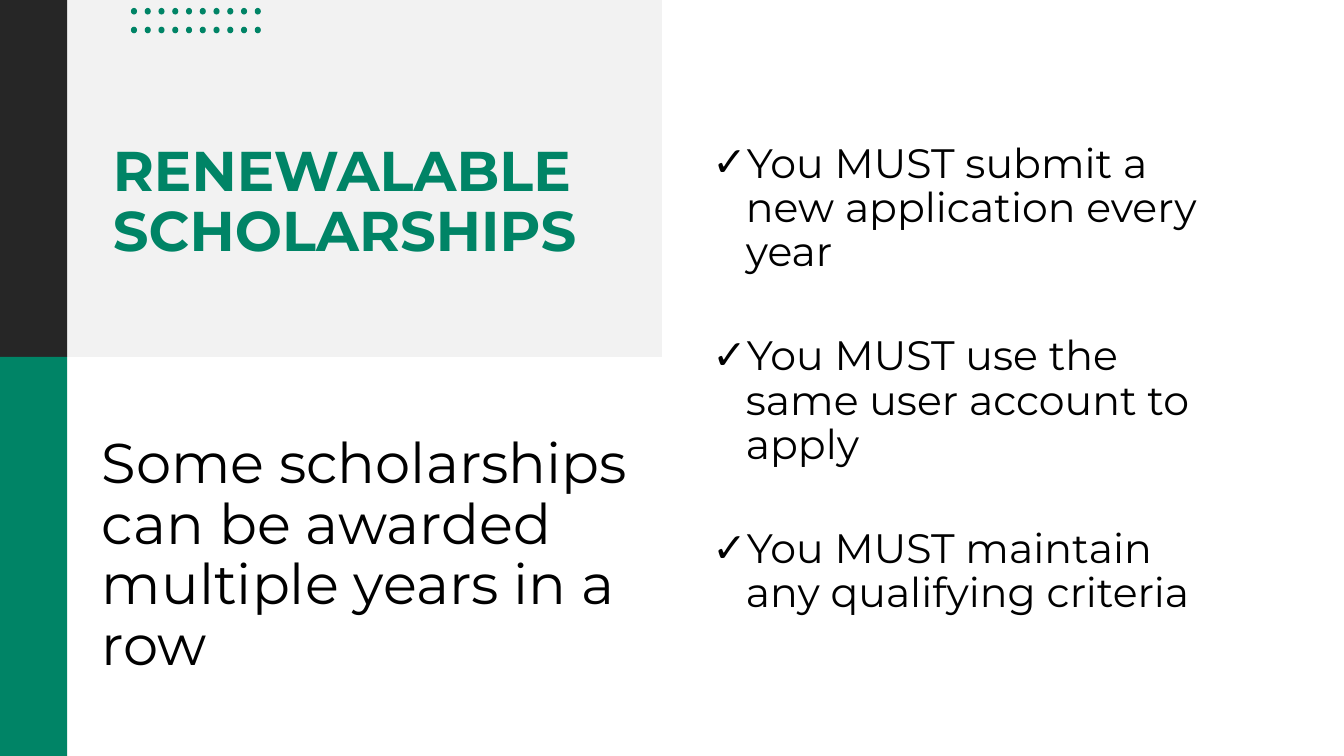
from lxml import etree
from pptx import Presentation
from pptx import util as u
from pptx.dml.color import RGBColor
from pptx.enum import shapes, text
from pptx.oxml.ns import qn

FONT = "Montserrat"
COLORS = {"green": "008466", "dark": "262626", "panel": "F2F2F2", "text": "000000"}

TITLE_LINES = ["RENEWALABLE", "SCHOLARSHIPS"]
STATEMENT = "Some scholarships can be awarded multiple years in a row"
REQUIREMENTS = [
    "You MUST submit a new application every year",
    "You MUST use the same user account to apply",
    "You MUST maintain any qualifying criteria",
]

# Lengths in centimetres
WIDTH, HEIGHT = 50.8, 28.58
PANEL_WIDTH, PANEL_HEIGHT = 25.02, 13.49
BAR_WIDTH = 2.54
TITLE_BOX = (4.01, 3.0, 19.25, 9.37)
STATEMENT_BOX = (3.45, 14.96, 21.59, 12.14)
REQUIREMENTS_BOX = (26.52, 3.0, 19.3, 22.71)
DOT_ROWS, DOT_COLUMNS = 2, 10
DOT_LEFT, DOT_TOP = 4.95, 0.3
DOT_STEP_X, DOT_STEP_Y = 0.52, 0.71
DOT_WIDTH, DOT_HEIGHT = 0.23, 0.25


def add_filled(container, kind, box, color):
    shape = container.add_shape(kind, *map(u.Cm, box))
    shape.shadow.inherit = False
    shape.fill.solid()
    shape.fill.fore_color.rgb = RGBColor.from_string(COLORS[color])
    shape.line.fill.background()
    return shape


def place_placeholder(placeholder, box):
    placeholder.left, placeholder.top, placeholder.width, placeholder.height = map(u.Cm, box)
    frame = placeholder.text_frame
    frame.word_wrap = True
    frame.auto_size = text.MSO_AUTO_SIZE.NONE
    frame.vertical_anchor = text.MSO_ANCHOR.MIDDLE
    return frame


def add_run(paragraph, words, size, color, bold=False):
    run = paragraph.add_run()
    run.text = words
    run.font.name = FONT
    run.font.size = u.Pt(size)
    run.font.bold = bold
    run.font.color.rgb = RGBColor.from_string(COLORS[color])


def format_paragraph(paragraph, bullet=None, margin=0, indent=0, space_before=0):
    paragraph.alignment = text.PP_ALIGN.LEFT
    paragraph.line_spacing = 0.9
    paragraph.space_before = u.Pt(space_before)
    properties = paragraph._p.get_or_add_pPr()
    properties.set("marL", str(u.Cm(margin)))
    properties.set("indent", str(u.Cm(indent)))
    if bullet:
        etree.SubElement(properties, qn("a:buChar")).set("char", bullet)
    else:
        etree.SubElement(properties, qn("a:buNone"))


def add_decoration(slide):
    """Draw the panel, side bars and dots behind the placeholders."""
    rectangle = shapes.MSO_SHAPE.RECTANGLE
    decoration = [
        add_filled(slide.shapes, rectangle, box, color)
        for box, color in [
            ((0, 0, PANEL_WIDTH, PANEL_HEIGHT), "panel"),
            ((0, 0, BAR_WIDTH, PANEL_HEIGHT), "dark"),
            ((0, PANEL_HEIGHT, BAR_WIDTH, HEIGHT - PANEL_HEIGHT), "green"),
        ]
    ]
    dots = slide.shapes.add_group_shape()
    for row in range(DOT_ROWS):
        for column in range(DOT_COLUMNS):
            box = (DOT_LEFT + column * DOT_STEP_X, DOT_TOP + row * DOT_STEP_Y,
                   DOT_WIDTH, DOT_HEIGHT)
            add_filled(dots.shapes, shapes.MSO_SHAPE.OVAL, box, "green")
    for shape in decoration + [dots]:
        slide.shapes.title.element.addprevious(shape.element)


def main():
    presentation = Presentation()
    presentation.slide_width, presentation.slide_height = u.Cm(WIDTH), u.Cm(HEIGHT)
    slide = presentation.slides.add_slide(presentation.slide_layouts.get_by_name("Two Content"))
    title, statement, requirements = slide.placeholders
    add_decoration(slide)

    paragraph = place_placeholder(title, TITLE_BOX).paragraphs[0]
    format_paragraph(paragraph)
    for number, line in enumerate(TITLE_LINES):
        if number:
            paragraph.add_line_break()
        add_run(paragraph, line, 60, "green", bold=True)

    paragraph = place_placeholder(statement, STATEMENT_BOX).paragraphs[0]
    format_paragraph(paragraph, margin=0.15)
    add_run(paragraph, STATEMENT, 60, "text")

    frame = place_placeholder(requirements, REQUIREMENTS_BOX)
    for number, requirement in enumerate(REQUIREMENTS):
        paragraph = frame.add_paragraph() if number else frame.paragraphs[0]
        format_paragraph(paragraph, "✓", 1.42, -1.27, space_before=64 if number else 0)
        add_run(paragraph, requirement, 44, "text")

    presentation.save("out.pptx")


if __name__ == "__main__":
    main()
